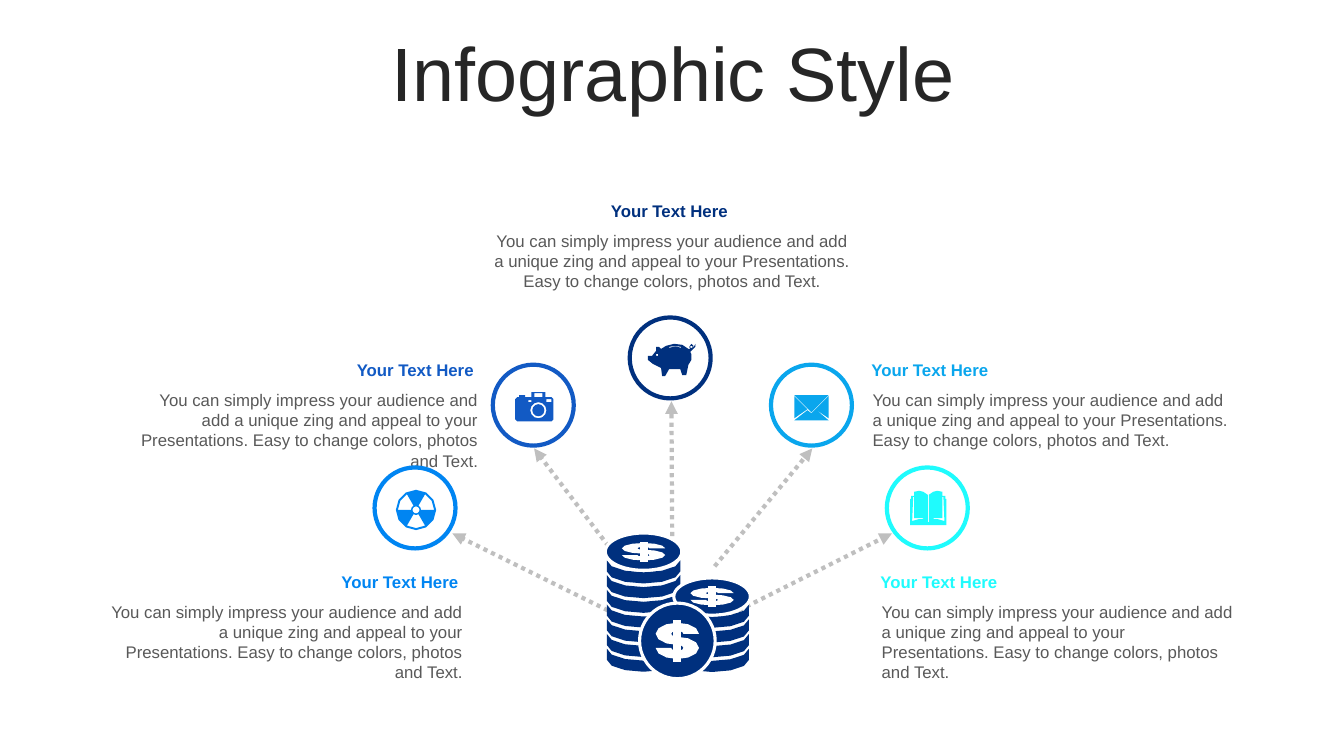
from dataclasses import dataclass
from math import cos, radians, sin

from lxml.etree import SubElement
from pptx import Presentation
from pptx.dml.color import RGBColor
from pptx.enum.shapes import MSO_CONNECTOR, MSO_SHAPE
from pptx.enum.text import MSO_ANCHOR, MSO_AUTO_SIZE, PP_ALIGN as Align
from pptx.oxml.ns import qn
from pptx.util import Cm, Pt

Point = tuple[float, float]
Contour = list[Point]

GRID = 0.0254
ARC_STEP = 30
NAVY, WHITE, GREY, INK, DOTS = "00307E", "FFFFFF", "595959", "262626", "BFBFBF"
HEADING = "Your Text Here"
BODY = ("You can simply impress your audience and add a unique zing and appeal to your "
        "Presentations. Easy to change colors, photos and Text.")


@dataclass
class Topic:
    """A ringed icon with its arrow and its text block, in centimetres."""
    colour: str
    centre: Point
    icon: list[Contour]
    arrow_from: Point
    arrow_to: Point
    text_at: Point
    text_width: float
    align: Align


@dataclass
class Stack:
    """A pile of coins, in grid units from the front coin."""
    x: float
    top: float
    first_band: float
    bands: int


def arc(x: float, y: float, rx: float, ry: float, start: int = 0, end: int = 360) -> Contour:
    """Sample an elliptical arc, with angles clockwise from the right."""
    steps = abs(end - start) // ARC_STEP
    angles = [radians(start + (end - start) * i / steps) for i in range(steps + 1)]
    return [(x + rx * cos(a), y + ry * sin(a)) for a in angles]


def box(left: float, top: float, right: float, bottom: float) -> Contour:
    """Return the corners of a rectangle."""
    return [(left, top), (right, top), (right, bottom), (left, bottom)]


def sector(start: int) -> Contour:
    """Return one opening of the radiation sign."""
    return arc(1, 2, 18, 18, start, start + 60) + arc(1, 2, 5, 5, start + 60, start)


def mirrored(contours: list[Contour]) -> list[Contour]:
    """Return contours together with their reflection in the book spine."""
    return contours + [[(2 - x, y) for x, y in contour] for contour in contours]


PIG = [
    [(4, -14), (12, -13), (18, -9), (20, -9), (19, -11), (21, -14), (23, -12),
     (23, -10), (25, -14), (25, -11), (20, -6), (21, -4), (21, 2), (18, 7),
     (16, 17), (12, 17), (10, 11), (-1, 11), (-5, 18), (-8, 18), (-9, 10), (-17, 6),
     (-22, 2), (-22, -2), (-18, -2), (-14, -7), (-14, -11), (-11, -11), (-9, -9), (-4, -12)],
    [(-1, -11), (-1, -10), (5, -11.5), (11, -10), (11, -11), (5, -12)],
    box(-14, -4, -12, -2), box(20, -12, 22, -10),
]
CAMERA = [
    [(-18, 14), (-18, -6), (-16, -8), (-14, -8), (-14, -10), (-8, -10), (-8, -8), (-2, -8),
     (-2, -13), (12, -13), (12, -8), (18, -8), (20, -6), (20, 14), (18, 16), (-16, 16)],
    box(1, -12, 9, -8), box(-5, -5, -2, -3), box(13, -6, 18, -3),
    arc(5, 5, 8, 8), arc(5, 5, 6, 6),
]
MAIL = [
    [(4, 4), (17, 15), (-17, 15), (-4, 5), (0, 8)],
    [(17, -9), (17, 13), (4, 4)],
    [(-17, -9), (-4, 4), (-17, 13)],
    [(-17, -10), (17, -10), (0, 7)],
]
RADIATION = [arc(1, 2, 20, 20), arc(1, 2, 3.5, 3.5), *map(sector, (60, 180, 300))]
BOOK = mirrored([
    [(1, 17), (-17, 17), (-17, -9), (-16, -9), (-16, -12), (-13, -12), (-13, -16),
     (-8, -17), (-4, -16), (0.5, -13), (0.5, 14), (1, 14)],
    [(-14, -11), (-15, 13), (-8, 11), (-3, 11), (0.5, 14), (-5, 10), (-13, 10), (-13, -11)],
])
S_HALF = arc(0, -7, 21.5, 11, 360, 90) + arc(0, 7, 6, 3, -90, 180)
DOLLAR_S = S_HALF + [(-x, -y) for x, y in S_HALF]

TOPICS = [
    Topic("1FFBFD", (23.37, 12.8), BOOK, (18.24, 15.57), (22.48, 13.44),
          (21.97, 14.27), 9.42, Align.LEFT),
    Topic("0AA6ED", (20.45, 10.21), MAIL, (18.01, 14.27), (20.47, 11.3),
          (21.74, 8.94), 9.58, Align.LEFT),
    Topic("125AC4", (13.44, 10.21), CAMERA, (15.72, 14.27), (13.46, 11.3),
          (2.95, 8.94), 9.35, Align.RIGHT),
    Topic("0085F2", (10.46, 12.8), RADIATION, (15.7, 15.57), (11.4, 13.44),
          (2.49, 14.27), 9.42, Align.RIGHT),
    Topic(NAVY, (16.89, 9.02), PIG, (16.94, 13.51), (16.92, 10.11),
          (12.19, 4.93), 9.5, Align.CENTER),
]
STACKS = [Stack(-33.5, -88.5, -80, 7), Stack(34.5, -44, -36, 4)]
FRONT_COIN = (17.07, 16.15)


def rgb(colour: str) -> RGBColor:
    """Turn a hex string into a colour."""
    return RGBColor.from_string(colour)


def draw_outline(shapes, centre: Point, contours: list[Contour], colour: str) -> None:
    """Draw closed contours, in grid units from a centre, as one filled shape."""
    placed = [[(Cm(centre[0] + x * GRID), Cm(centre[1] + y * GRID)) for x, y in contour]
              for contour in contours]
    builder = shapes.build_freeform(*placed[0][0])
    for index, contour in enumerate(placed):
        if index:
            builder.move_to(*contour[0])
        builder.add_line_segments(contour[1:], close=True)
    outline = builder.convert_to_shape()
    outline.shadow.inherit = False
    outline.fill.solid()
    outline.fill.fore_color.rgb = rgb(colour)
    outline.line.fill.background()


def draw_disc(shapes, centre: Point, rx: float, ry: float,
              fill: str, edge: str, weight: float) -> None:
    """Draw an edged ellipse around a centre, in centimetres."""
    disc = shapes.add_shape(MSO_SHAPE.OVAL, Cm(centre[0] - rx), Cm(centre[1] - ry),
                            Cm(2 * rx), Cm(2 * ry))
    disc.shadow.inherit = False
    disc.fill.solid()
    disc.fill.fore_color.rgb = rgb(fill)
    disc.line.color.rgb = rgb(edge)
    disc.line.width = Pt(weight)


def draw_text(shapes, left: float, top: float, width: float, height: float,
              text: str, colour: str, align: Align, bold: bool) -> None:
    """Add a wrapped one-paragraph text box."""
    frame = shapes.add_textbox(Cm(left), Cm(top), Cm(width), Cm(height)).text_frame
    frame.word_wrap = True
    frame.auto_size = MSO_AUTO_SIZE.SHAPE_TO_FIT_TEXT
    frame.text = text
    format_paragraph(frame.paragraphs[0], 12, colour, align, bold)


def format_paragraph(paragraph, size: float, colour: str, align: Align, bold: bool) -> None:
    """Set the alignment and the font of a paragraph's run."""
    paragraph.alignment = align
    font = paragraph.runs[0].font
    font.name, font.size, font.bold = "Arial", Pt(size), bold
    font.color.rgb = rgb(colour)


def draw_arrow(shapes, start: Point, end: Point) -> None:
    """Draw a dotted arrow."""
    arrow = shapes.add_connector(MSO_CONNECTOR.STRAIGHT, *map(Cm, start + end))
    arrow.line.color.rgb = rgb(DOTS)
    arrow.line.width = Pt(3)
    line = arrow.line._get_or_add_ln()
    SubElement(line, qn("a:prstDash"), val="sysDot")
    SubElement(line, qn("a:tailEnd"), type="triangle")
    SubElement(arrow._element.spPr, qn("a:effectLst"))


def draw_coin_face(shapes, centre: Point, rx: float, ry: float, flatness: float) -> None:
    """Draw a coin with its dollar sign, radii in grid units."""
    draw_disc(shapes, centre, rx * GRID, ry * GRID, NAVY, WHITE, 2.25)
    for part in (DOLLAR_S, box(-4, -21, 4, 21)):
        draw_outline(shapes, centre, [[(x, y * flatness) for x, y in part]], WHITE)


def draw_coins(shapes) -> None:
    """Draw both stacks and the coin in front of them."""
    x, y = FRONT_COIN
    for stack in STACKS:
        levels = [stack.first_band + 14.6 * i for i in range(stack.bands)]
        bands = [arc(stack.x, level, 36.5, 12, 0, 180)
                 + arc(stack.x, level + 11, 36.5, 12, 180, 0) for level in levels]
        draw_outline(shapes, FRONT_COIN, bands, NAVY)
        draw_coin_face(shapes, (x + stack.x * GRID, y + stack.top * GRID), 38, 18.5, 0.48)
    draw_coin_face(shapes, FRONT_COIN, 37.5, 37.5, 1)


def main() -> None:
    """Build the slide and save it."""
    deck = Presentation()
    deck.slide_width, deck.slide_height = Cm(33.87), Cm(19.05)
    slide = deck.slides.add_slide(deck.slide_layouts[5])
    shapes = slide.shapes
    title = shapes.title
    title.left, title.top, title.width, title.height = map(Cm, (0.89, 0.94, 32.16, 2.01))
    title.text_frame.text = "Infographic Style"
    title.text_frame.vertical_anchor = MSO_ANCHOR.MIDDLE
    title.text_frame.paragraphs[0].line_spacing = 0.9
    format_paragraph(title.text_frame.paragraphs[0], 54, INK, Align.CENTER, False)
    for topic in TOPICS:
        left, top = topic.text_at
        draw_disc(shapes, topic.centre, 1.02, 1.02, WHITE, topic.colour, 3)
        draw_outline(shapes, topic.centre, topic.icon, topic.colour)
        draw_text(shapes, left, top + 0.76, topic.text_width, 1.8,
                  BODY, GREY, topic.align, False)
        draw_text(shapes, left - 0.03, top, topic.text_width - 0.08, 0.76,
                  HEADING, topic.colour, topic.align, True)
        draw_arrow(shapes, topic.arrow_from, topic.arrow_to)
    draw_coins(shapes)
    deck.save("out.pptx")


if __name__ == "__main__":
    main()
